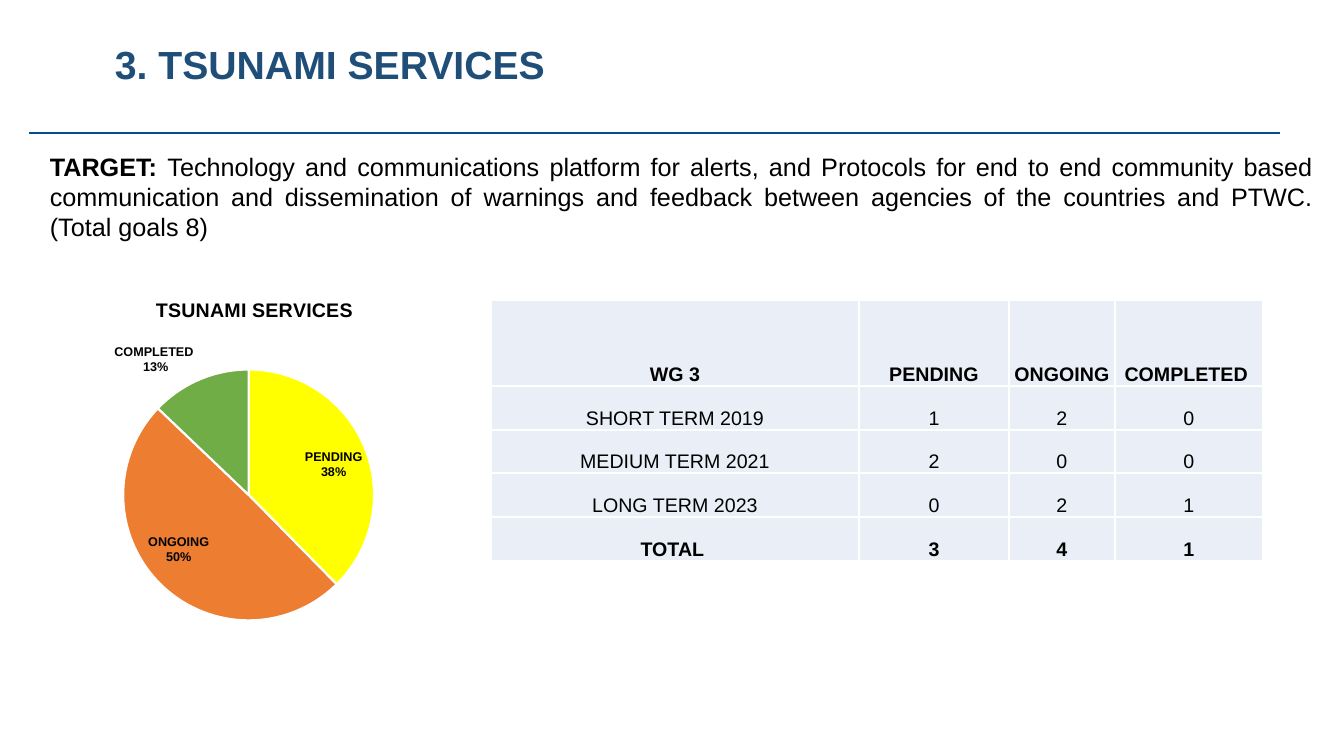
from lxml.etree import SubElement
from pptx import Presentation
from pptx.chart.data import CategoryChartData
from pptx.dml.color import RGBColor
from pptx.enum.chart import XL_CHART_TYPE, XL_LABEL_POSITION
from pptx.enum.shapes import MSO_CONNECTOR
from pptx.enum.text import MSO_ANCHOR, MSO_AUTO_SIZE, PP_ALIGN
from pptx.oxml import parse_xml
from pptx.oxml.ns import nsdecls, qn
from pptx.util import Pt

EMU_PER_PX = 914400 / 100.8
FONT = "Arial"
BLACK = "000000"
WHITE = "FFFFFF"
NAVY = "1F4E79"
RULE_BLUE = "014F92"
CELL_FILL = "EAEFF7"

TARGET = (
    "Technology and communications platform for alerts, and Protocols for "
    "end to end community based communication and dissemination of warnings "
    "and feedback between agencies of the countries and PTWC. (Total goals 8) "
)
GOAL_SHARES = [
    ("PENDING", 38, "FFFF00"),
    ("ONGOING", 50, "ED7D31"),
    ("COMPLETED ", 13, "70AD47"),
]
GOAL_ROWS = [
    ("WG 3", "PENDING", "ONGOING", "COMPLETED "),
    ("SHORT TERM 2019", "1", "2", "0"),
    ("MEDIUM TERM 2021", "2", "0", "0"),
    ("LONG TERM 2023", "0", "2", "1"),
    ("TOTAL ", "3", "4", "1"),
]
COLUMN_WIDTHS = [368, 150, 106, 148]
ROW_HEIGHTS = [86, 44, 43, 44, 44]


def px(length):
    return round(length * EMU_PER_PX)


def box_px(*lengths):
    return [px(length) for length in lengths]


def color(value):
    return RGBColor.from_string(value)


def style_font(font, size, bold=False, fill=BLACK):
    font.name = FONT
    font.size = Pt(size)
    font.bold = bold
    font.color.rgb = color(fill)


def add_text(page, place, spans, size, fill=BLACK):
    box = page.shapes.add_textbox(*box_px(*place))
    box.text_frame.word_wrap = True
    para = box.text_frame.paragraphs[0]
    for text, bold in spans:
        span = para.add_run()
        span.text = text
        style_font(span.font, size, bold, fill)
    return box.text_frame


def add_rule(page, left, right, top):
    rule = page.shapes.add_connector(
        MSO_CONNECTOR.STRAIGHT, *box_px(left, top, right, top)
    )
    rule.line.color.rgb = color(RULE_BLUE)
    rule.line.width = Pt(1.75)
    SubElement(rule._element.spPr, qn("a:effectLst"))


def place_plot(chart, x, y, width, height):
    plot_area = chart._chartSpace.chart.plotArea
    old_layout = plot_area.find(qn("c:layout"))
    if old_layout is not None:
        plot_area.remove(old_layout)
    plot_area.insert(0, parse_xml(
        f'<c:layout {nsdecls("c")}><c:manualLayout>'
        '<c:layoutTarget val="inner"/>'
        '<c:xMode val="edge"/><c:yMode val="edge"/>'
        f'<c:x val="{x}"/><c:y val="{y}"/>'
        f'<c:w val="{width}"/><c:h val="{height}"/>'
        '</c:manualLayout></c:layout>'
    ))


def add_goal_pie(page, place):
    data = CategoryChartData()
    data.categories = [name for name, _, _ in GOAL_SHARES]
    data.add_series("TSUNAMI SERVICES", [share for _, share, _ in GOAL_SHARES])
    chart = page.shapes.add_chart(
        XL_CHART_TYPE.PIE, *box_px(*place), data
    ).chart
    style_font(chart.font, 10, True)
    chart.has_legend = False
    chart.has_title = True
    title = chart.chart_title.text_frame
    title.text = "TSUNAMI SERVICES"
    style_font(title.paragraphs[0].runs[0].font, 14, True)
    place_plot(chart, 0.27, 0.24, 0.44, 0.68)

    plot = chart.plots[0]
    plot.vary_by_categories = True
    series = plot.series[0]
    for index, (_, _, fill) in enumerate(GOAL_SHARES):
        wedge = series.points[index].format
        wedge.fill.solid()
        wedge.fill.fore_color.rgb = color(fill)
        wedge.line.color.rgb = color(WHITE)
        wedge.line.width = Pt(1.5)

    labels = series.data_labels
    style_font(labels.font, 9, True)
    labels.show_value = False
    labels.show_category_name = True
    labels.show_percentage = True
    labels.position = XL_LABEL_POSITION.BEST_FIT


def add_cell_borders(cell):
    properties = cell._tc.get_or_add_tcPr()
    for side in ("lnL", "lnR", "lnT", "lnB"):
        line = SubElement(properties, qn(f"a:{side}"), w=str(Pt(1)))
        solid = SubElement(line, qn("a:solidFill"))
        SubElement(solid, qn("a:srgbClr"), val=WHITE)


def fill_cell(cell, text, bold):
    cell.text_frame.text = text
    para = cell.text_frame.paragraphs[0]
    para.alignment = PP_ALIGN.CENTER
    style_font(para.runs[0].font, 14, bold)
    cell.vertical_anchor = MSO_ANCHOR.BOTTOM
    cell.margin_left = cell.margin_right = cell.margin_top = px(1)
    cell.margin_bottom = 0
    add_cell_borders(cell)
    cell.fill.solid()
    cell.fill.fore_color.rgb = color(CELL_FILL)


def add_goal_table(page, left, top):
    place = (left, top, sum(COLUMN_WIDTHS), sum(ROW_HEIGHTS))
    table = page.shapes.add_table(
        len(GOAL_ROWS), len(COLUMN_WIDTHS), *box_px(*place)
    ).table
    for column, width in zip(table.columns, COLUMN_WIDTHS):
        column.width = px(width)
    for row, height in zip(table.rows, ROW_HEIGHTS):
        row.height = px(height)
    last = len(GOAL_ROWS) - 1
    for row_index, values in enumerate(GOAL_ROWS):
        for column_index, text in enumerate(values):
            fill_cell(
                table.cell(row_index, column_index), text, row_index in (0, last)
            )


def main():
    deck = Presentation()
    deck.slide_width, deck.slide_height = box_px(1344, 756)
    page = deck.slides.add_slide(deck.slide_layouts[6])

    title = add_text(
        page, (105, 41, 795, 73), [("3. TSUNAMI SERVICES", True)], 28, NAVY
    )
    title.paragraphs[0].line_spacing = 0.9

    target = add_text(
        page, (40, 146, 1283, 102), [("TARGET: ", True), (TARGET, False)], 18
    )
    target.auto_size = MSO_AUTO_SIZE.SHAPE_TO_FIT_TEXT
    target.paragraphs[0].alignment = PP_ALIGN.JUSTIFY
    target.paragraphs[0].space_after = Pt(6)

    add_goal_pie(page, (-37, 281, 583, 369))
    add_goal_table(page, 491, 300)
    add_rule(page, 29, 1280, 133)
    deck.save("out.pptx")


if __name__ == "__main__":
    main()
